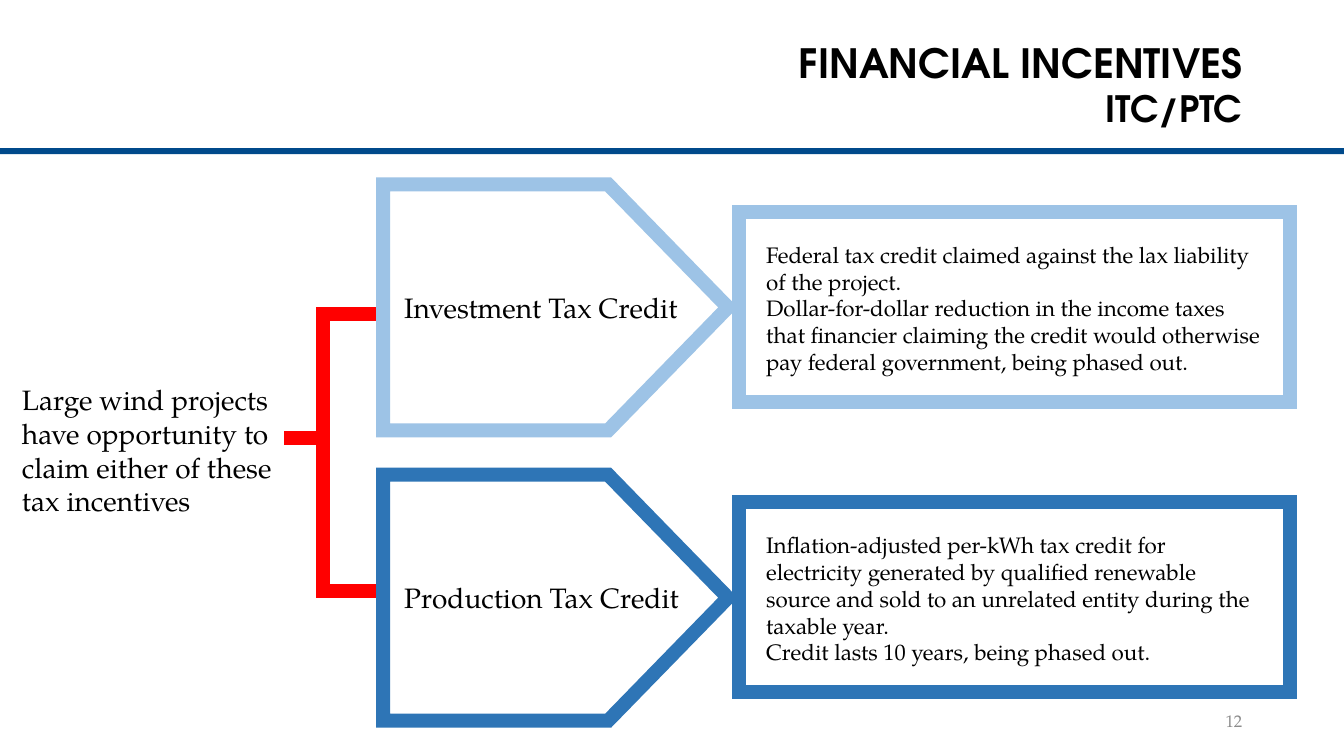
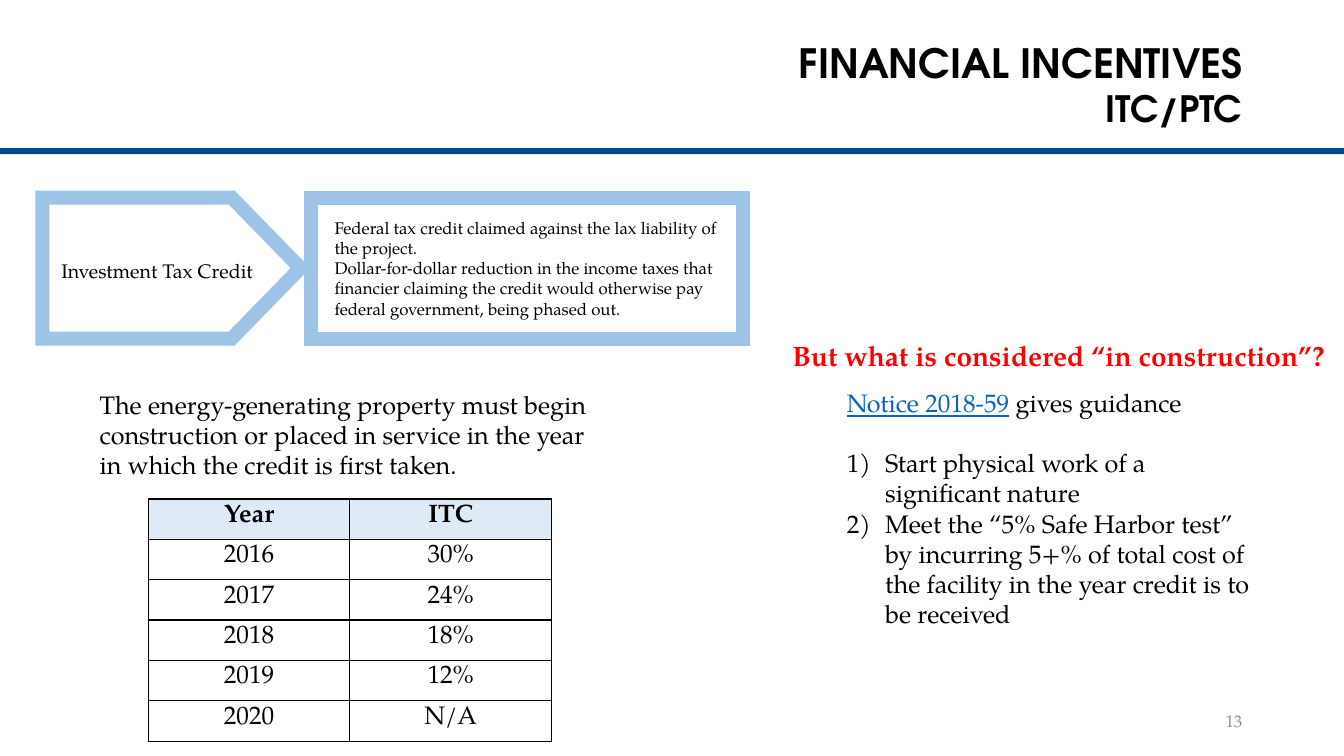
"""Build two slides on the wind energy tax credits."""
from lxml.etree import SubElement
from pptx import Presentation
from pptx.dml.color import RGBColor
from pptx.enum.shapes import MSO_CONNECTOR, MSO_SHAPE
from pptx.enum.text import MSO_ANCHOR as ANCHOR, PP_ALIGN as ALIGN
from pptx.oxml.ns import qn
from pptx.util import Inches, Pt

BLACK = RGBColor(0x00, 0x00, 0x00)
RED = RGBColor(0xFF, 0x00, 0x00)
GREY = RGBColor(0x8C, 0x8C, 0x8C)
NAVY = RGBColor(0x00, 0x4A, 0x8B)
LIGHT_BLUE = RGBColor(0x9D, 0xC3, 0xE6)
MID_BLUE = RGBColor(0x2E, 0x75, 0xB6)
PALE_BLUE = RGBColor(0xDE, 0xEB, 0xF7)
LINK_BLUE = RGBColor(0x05, 0x63, 0xC1)

ITC_NOTES = [
    "Federal tax credit claimed against the lax liability of the project.",
    "Dollar-for-dollar reduction in the income taxes that financier claiming "
    "the credit would otherwise pay federal government, being phased out.",
]
PTC_NOTES = [
    "Inflation-adjusted per-kWh tax credit for electricity generated by "
    "qualified renewable source and sold to an unrelated entity during the "
    "taxable year.",
    "Credit lasts 10 years, being phased out.",
]
ITC_RATES = [
    ("Year", "ITC"), ("2016", "30%"), ("2017", "24%"),
    ("2018", "18%"), ("2019", "12%"), ("2020", "N/A"),
]


class Deck:
    HEAD_FONT = "TeX Gyre Adventor"
    BODY_FONT = "TeX Gyre Pagella"
    STROKE = Pt(10)

    def __init__(self):
        self.prs = Presentation()
        self.prs.slide_width = Inches(13.33)
        self.prs.slide_height = Inches(7.5)
        self.s = None

    def slide(self, title, subtitle, number):
        self.s = self.prs.slides.add_slide(self.prs.slide_layouts[6])
        band = self.shape(MSO_SHAPE.RECTANGLE, (0, 1.47, 13.33, 0.06))
        band.fill.solid()
        band.fill.fore_color.rgb = NAVY
        band.line.fill.background()
        head = dict(font=self.HEAD_FONT, bold=True, align=ALIGN.RIGHT)
        self.text((1.89, 0.4, 10.53, 0.49), [title], 28.8,
                  anchor=ANCHOR.MIDDLE, spacing=0.9, **head)
        self.text((1.89, 0.89, 10.53, 0.46), [subtitle], 25.9,
                  spacing=0.8, **head)
        self.text((9.42, 6.95, 3, 0.4), [number], 12, color=GREY,
                  align=ALIGN.RIGHT, anchor=ANCHOR.MIDDLE)

    def shape(self, kind, box):
        sp = self.s.shapes.add_shape(kind, *map(Inches, box))
        sp.shadow.inherit = False
        return sp

    def outline(self, kind, box, color):
        sp = self.shape(kind, box)
        sp.fill.background()
        sp.line.color.rgb = color
        sp.line.width = self.STROKE
        SubElement(sp.line._get_or_add_ln(), qn("a:miter"), lim="800000")
        return sp

    def plate(self, box, color):
        self.outline(MSO_SHAPE.PENTAGON, box, color).adjustments[0] = 0.487

    def frame(self, box, color):
        self.outline(MSO_SHAPE.RECTANGLE, box, color)

    def line(self, x1, y1, x2, y2, color=RED):
        c = self.s.shapes.add_connector(
            MSO_CONNECTOR.STRAIGHT, *map(Inches, (x1, y1, x2, y2)))
        c.line.color.rgb = color
        c.line.width = self.STROKE
        SubElement(c._element.spPr, qn("a:effectLst"))

    def run(self, p, text, size, color=BLACK, bold=False, underline=False,
            font=BODY_FONT):
        r = p.add_run()
        r.text = text
        r.font.name = font
        r.font.size = Pt(size)
        r.font.bold = bold
        r.font.underline = underline
        r.font.color.rgb = color

    def text(self, box, paras, size, align=ALIGN.LEFT, anchor=ANCHOR.TOP,
             spacing=None, wrap=True, numbered=False, **style):
        tf = self.s.shapes.add_textbox(*map(Inches, box)).text_frame
        tf.word_wrap = wrap
        tf.vertical_anchor = anchor
        for i, para in enumerate(paras):
            p = tf.add_paragraph() if i else tf.paragraphs[0]
            p.alignment = align
            if spacing:
                p.line_spacing = spacing
            if numbered:
                pPr = p._p.get_or_add_pPr()
                pPr.set("marL", str(Inches(0.38)))
                pPr.set("indent", str(Inches(-0.38)))
                SubElement(pPr, qn("a:buFont"), typeface="+mj-lt")
                SubElement(pPr, qn("a:buAutoNum"), type="arabicParenR")
            runs = [(para, {})] if isinstance(para, str) else para
            for words, extra in runs:
                self.run(p, words, size, **{**style, **extra})

    def table(self, left, top, col_width, row_height, rows, size):
        n_rows, n_cols = len(rows), len(rows[0])
        tbl = self.s.shapes.add_table(
            n_rows, n_cols, Inches(left), Inches(top),
            Inches(col_width * n_cols), Inches(row_height * n_rows)).table
        tbl.first_row = tbl.horz_banding = False
        for i, row in enumerate(rows):
            for j, value in enumerate(row):
                cell = tbl.cell(i, j)
                self.borders(cell)
                if i:
                    cell.fill.background()
                else:
                    cell.fill.solid()
                    cell.fill.fore_color.rgb = PALE_BLUE
                p = cell.text_frame.paragraphs[0]
                p.alignment = ALIGN.CENTER
                self.run(p, value, size, bold=i == 0)

    def borders(self, cell):
        tcPr = cell._tc.get_or_add_tcPr()
        for side in ("lnL", "lnR", "lnT", "lnB"):
            ln = SubElement(tcPr, qn(f"a:{side}"), w=str(Pt(1)))
            fill = SubElement(ln, qn("a:solidFill"))
            SubElement(fill, qn("a:srgbClr"), val=str(BLACK))


def compare_credits(deck):
    deck.slide("FINANCIAL INCENTIVES", "ITC/PTC", "12")
    for y in (3.12, 5.86):
        deck.line(3.2, y, 3.8, y)
    credits = [("Investment Tax Credit", ITC_NOTES, LIGHT_BLUE),
               ("Production Tax Credit", PTC_NOTES, MID_BLUE)]
    for i, (name, notes, color) in enumerate(credits):
        dy = 2.88 * i
        deck.plate((3.8, 1.83 + dy, 3.42, 2.44), color)
        deck.text((3.91, 2.83 + dy, 2.96, 0.44), [name], 20, wrap=False)
        deck.frame((7.33, 2.1 + dy, 5.47, 1.89), color)
        deck.text((7.5, 2.34 + dy, 5.13, 1.45), notes, 16)
    deck.text((0.12, 3.75, 2.7, 1.45),
              ["Large wind projects have opportunity to claim either of "
               "these tax incentives"], 20)
    deck.line(3.2, 3.05, 3.2, 5.93)
    deck.line(2.82, 4.35, 3.2, 4.35)


def explain_investment_credit(deck):
    deck.slide("FINANCIAL INCENTIVES", "ITC/PTC", "13")
    deck.plate((0.42, 1.96, 2.56, 1.4), LIGHT_BLUE)
    deck.text((0.51, 2.52, 2.22, 0.34), ["Investment Tax Credit"], 14)
    deck.frame((3.08, 1.96, 4.29, 1.4), LIGHT_BLUE)
    deck.text((3.22, 2.11, 4.07, 1.11), ITC_NOTES, 12)
    deck.text((0.89, 3.81, 5.16, 1.01),
              ["The energy-generating property must begin construction or "
               "placed in service in the year in which the credit is first "
               "taken."], 18)
    deck.table(1.47, 4.95, 2, 0.4, ITC_RATES, 18)
    deck.text((7.76, 3.31, 5.83, 0.44),
              ["But what is considered “in construction”?"], 20,
              color=RED, bold=True)
    deck.text((8.3, 3.79, 4.29, 0.4),
              [[("Notice 2018-59", dict(color=LINK_BLUE, underline=True)),
                (" gives guidance", {})]], 18)
    deck.text((8.3, 4.39, 4.29, 1.92),
              ["Start physical work of a significant nature",
               "Meet the “5% Safe Harbor test” by incurring 5+% of total cost "
               "of the facility in the year credit is to be received"],
              18, numbered=True)


def main():
    deck = Deck()
    compare_credits(deck)
    explain_investment_credit(deck)
    deck.prs.save("out.pptx")


if __name__ == "__main__":
    main()
